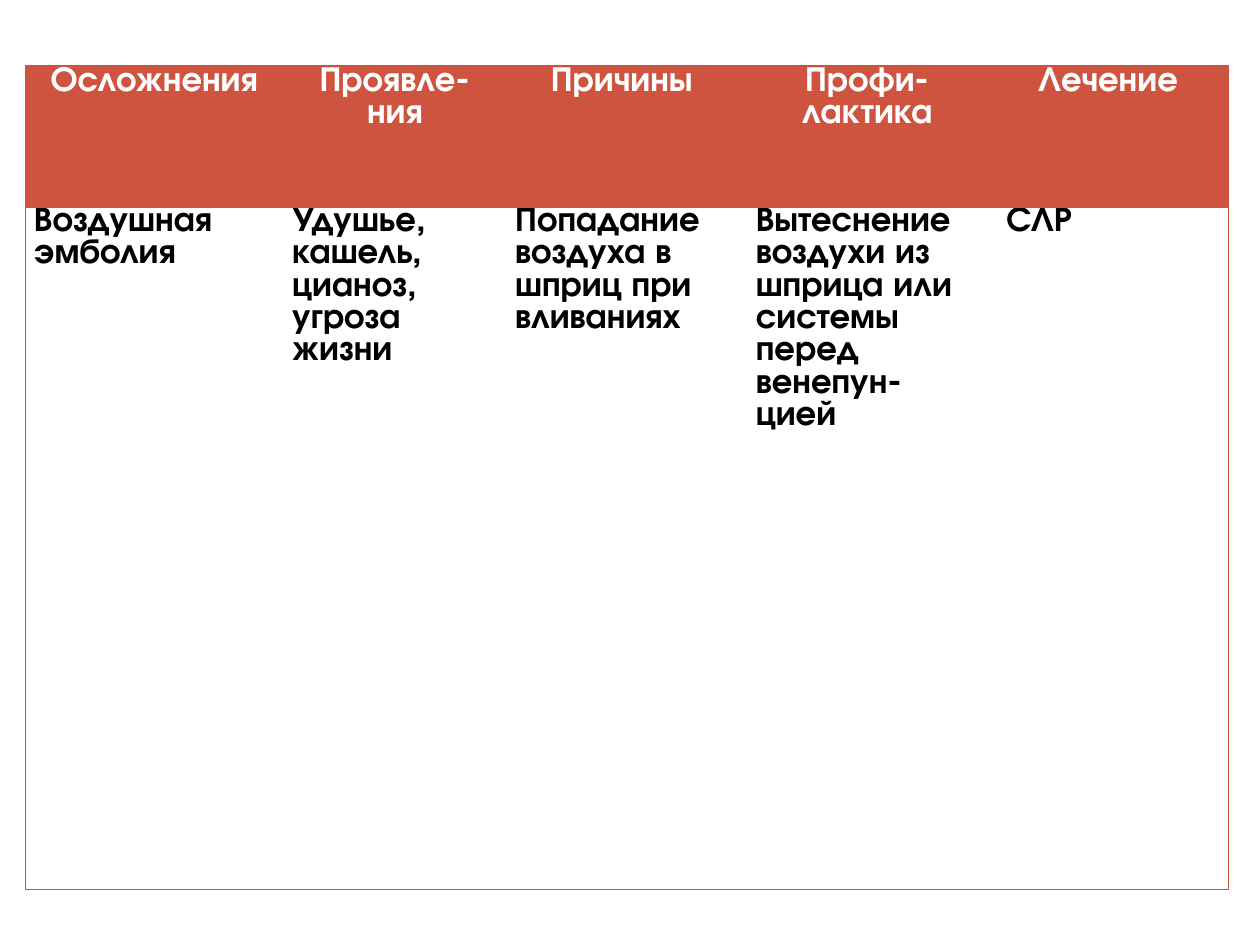
from lxml import etree
from pptx import Presentation
from pptx.dml.color import RGBColor
from pptx.enum import text
from pptx.oxml import ns
from pptx.util import Inches, Pt

RED = RGBColor(0xCF, 0x54, 0x3F)
BORDER = RGBColor(0xCE, 0x50, 0x3A)
WHITE = RGBColor(0xFF, 0xFF, 0xFF)
BLACK = RGBColor(0x00, 0x00, 0x00)

COLUMN_WIDTHS = [2.05, 1.77, 1.91, 1.91, 1.91]
ROW_HEIGHTS = [1.11, 5.43]
ROWS = [
    ["Осложнения", "Проявле-ния", "Причины ", "Профи-лактика", "Лечение"],
    [
        "Воздушная эмболия",
        "Удушье, кашель, цианоз, угроза жизни",
        "Попадание воздуха в шприц при вливаниях",
        "Вытеснение воздухи из шприца или системы перед венепун-цией",
        " СЛР",
    ],
]
ROW_STYLES = [
    {"fill": RED, "color": WHITE, "align": text.PP_ALIGN.CENTER},
    {"fill": WHITE, "color": BLACK, "align": text.PP_ALIGN.LEFT},
]
FONT = {"name": "TeX Gyre Adventor", "size": Pt(20), "bold": True}
MARGINS = {
    "margin_left": Inches(0.07),
    "margin_right": Inches(0.07),
    "margin_top": 0,
    "margin_bottom": 0,
}


def set_values(obj, values):
    for name, value in values.items():
        setattr(obj, name, value)


def add_border(cell, side, color, width):
    tc_pr = cell._tc.get_or_add_tcPr()
    ln = etree.Element(ns.qn(f"a:ln{side}"), w=str(Pt(width)))
    if color is None:
        etree.SubElement(ln, ns.qn("a:noFill"))
    else:
        fill = etree.SubElement(ln, ns.qn("a:solidFill"))
        etree.SubElement(fill, ns.qn("a:srgbClr"), val=str(color))
    tc_pr.insert("LRTB".index(side), ln)


def format_borders(cell, row, col):
    last_col = len(COLUMN_WIDTHS) - 1
    divider = (RED, 4)
    outer = (BORDER, 0.75)
    hidden = (None, 0.75)
    borders = {
        "L": outer if col == 0 else hidden,
        "R": outer if col == last_col else hidden,
        "T": outer if row == 0 else divider,
        "B": divider if row == 0 else outer,
    }
    for side, (color, width) in borders.items():
        add_border(cell, side, color, width)


def fill_cell(cell, words, style):
    set_values(cell, MARGINS)
    cell.fill.solid()
    cell.fill.fore_color.rgb = style["fill"]
    p = cell.text_frame.paragraphs[0]
    set_values(p, {"alignment": style["align"], "line_spacing": Pt(18.5)})
    r = p.add_run()
    r.text = words
    set_values(r.font, FONT)
    r.font.color.rgb = style["color"]


def add_complications_table(s):
    frame = s.shapes.add_table(
        len(ROWS), len(COLUMN_WIDTHS), Inches(0.2), Inches(0.52),
        Inches(sum(COLUMN_WIDTHS)), Inches(sum(ROW_HEIGHTS)),
    )
    table = frame.table
    table.horz_banding = False
    for column, width in zip(table.columns, COLUMN_WIDTHS):
        column.width = Inches(width)
    for row, height in zip(table.rows, ROW_HEIGHTS):
        row.height = Inches(height)
    for i, (row, style) in enumerate(zip(ROWS, ROW_STYLES)):
        for j, words in enumerate(row):
            cell = table.cell(i, j)
            fill_cell(cell, words, style)
            format_borders(cell, i, j)


def main():
    prs = Presentation()
    set_values(prs, {"slide_width": Inches(10), "slide_height": Inches(7.5)})
    s = prs.slides.add_slide(prs.slide_layouts[6])
    add_complications_table(s)
    prs.save("out.pptx")


if __name__ == "__main__":
    main()
